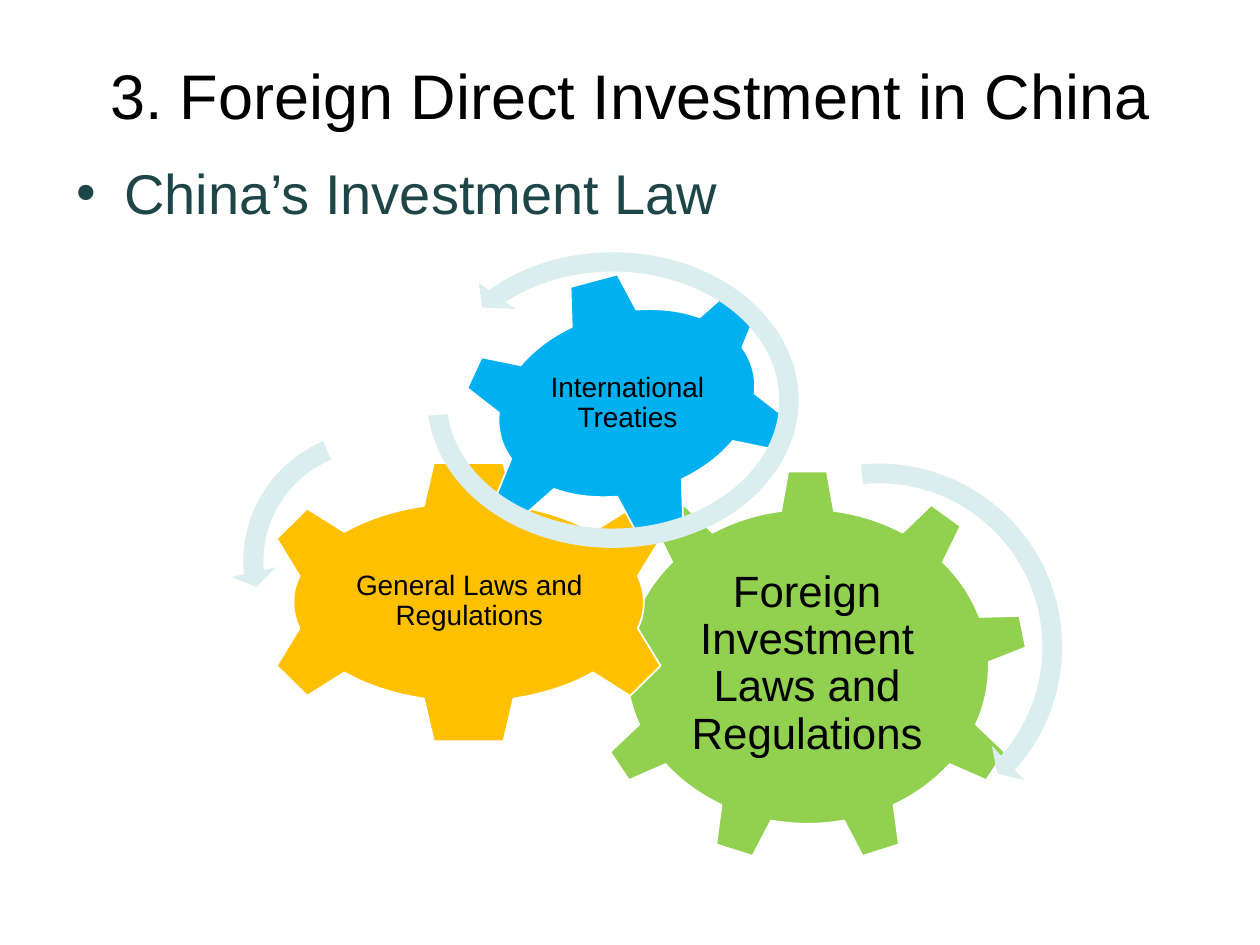
from dataclasses import dataclass

from pptx import Presentation
from pptx.dml.color import RGBColor
from pptx.enum.shapes import MSO_SHAPE
from pptx.enum.text import MSO_ANCHOR, MSO_AUTO_SIZE, PP_ALIGN
from pptx.shapes.autoshape import Shape
from pptx.shapes.group import GroupShape
from pptx.text.text import TextFrame
from pptx.util import Inches, Pt

Box = tuple[float, float, float, float]


@dataclass
class Gear:
    label: str
    outline: MSO_SHAPE
    box: Box
    label_box: Box
    color: str
    size: int
    inset: float = 0.02
    rotation: float = 0


@dataclass
class Arrow:
    outline: MSO_SHAPE
    box: Box
    adjustments: tuple[float, ...]


GEARS = [
    Gear("Foreign Investment Laws and Regulations", MSO_SHAPE.GEAR_9,
         (4.66, 3.73, 3.5, 3.12), (5.33, 4.47, 2.15, 1.6), "92D050", 25, inset=0.03),
    Gear("General Laws and Regulations", MSO_SHAPE.GEAR_6,
         (1.99, 3.65, 3.46, 2.26), (2.74, 4.22, 1.97, 1.11), "FFC000", 16),
    Gear("International Treaties", MSO_SHAPE.GEAR_6,
         (3.63, 2.17, 2.69, 2.06), (4.26, 2.59, 1.44, 1.23), "00B0F0", 16, rotation=345),
]
ARROWS = [
    Arrow(MSO_SHAPE.CIRCULAR_ARROW, (5.41, 3.57, 3.13, 3.13),
          (0.05, 2.99, 25.13, 158.68, 0.06)),
    Arrow(MSO_SHAPE.LEFT_CIRCULAR_ARROW, (1.83, 3.32, 2.27, 2.27),
          (0.07, 4.3, 104.89, 148.38, 0.08)),
    Arrow(MSO_SHAPE.LEFT_CIRCULAR_ARROW, (3.29, 1.9, 3.15, 2.55),
          (0.06, 3.94, 133.14, 105.08, 0.07)),
]


def rgb(value: str) -> RGBColor:
    return RGBColor.from_string(value)


def emu(box: Box) -> list[Inches]:
    return [Inches(length) for length in box]


def write(frame: TextFrame, text: str, *, size: float, color: str = "000000",
          align: PP_ALIGN = PP_ALIGN.CENTER, anchor: MSO_ANCHOR = MSO_ANCHOR.TOP,
          inset: float | None = None, line_spacing: float = 1,
          space_after: float = 0) -> None:
    frame.word_wrap = True
    frame.auto_size = MSO_AUTO_SIZE.NONE
    frame.vertical_anchor = anchor
    if inset is not None:
        frame.margin_left = frame.margin_right = Inches(inset)
        frame.margin_top = frame.margin_bottom = Inches(inset)
    paragraph = frame.paragraphs[0]
    paragraph.alignment = align
    paragraph.line_spacing = line_spacing
    paragraph.space_before = Pt(0)
    paragraph.space_after = Pt(space_after)
    run = paragraph.add_run()
    run.text = text
    run.font.name = "Arial"
    run.font.size = Pt(size)
    run.font.color.rgb = rgb(color)


def place(placeholder: Shape, box: Box) -> None:
    placeholder.left, placeholder.top, placeholder.width, placeholder.height = emu(box)


def add_filled(group: GroupShape, outline: MSO_SHAPE, box: Box, color: str) -> Shape:
    filled = group.shapes.add_shape(outline, *emu(box))
    filled.shadow.inherit = False
    filled.fill.solid()
    filled.fill.fore_color.rgb = rgb(color)
    return filled


def draw_gear(group: GroupShape, gear: Gear) -> None:
    wheel = add_filled(group, gear.outline, gear.box, gear.color)
    wheel.line.color.rgb = rgb("FFFFFF")
    wheel.line.width = Pt(1)
    wheel.rotation = gear.rotation
    label = group.shapes.add_textbox(*emu(gear.label_box))
    write(label.text_frame, gear.label, size=gear.size, anchor=MSO_ANCHOR.MIDDLE,
          inset=gear.inset, line_spacing=0.9, space_after=0.35 * gear.size)


def draw_arrow(group: GroupShape, arrow: Arrow) -> None:
    turn = add_filled(group, arrow.outline, arrow.box, "DAEDEF")
    turn.line.fill.background()
    for index, value in enumerate(arrow.adjustments):
        turn.adjustments[index] = value


def main() -> None:
    presentation = Presentation()
    presentation.slide_width, presentation.slide_height = Inches(10), Inches(7.5)
    slide = presentation.slides.add_slide(presentation.slide_layouts[1])

    # Title and bullet
    title, topic = slide.placeholders
    place(title, (0.69, 0.4, 8.62, 1.45))
    write(title.text_frame, "3. Foreign Direct Investment in China", size=36)
    place(topic, (0.51, 1.21, 8.62, 4.76))
    write(topic.text_frame, "China’s Investment Law", size=32, color="1E4649",
          align=PP_ALIGN.LEFT)

    # Interlocking gears with their turning arrows on top
    gearwork = slide.shapes.add_group_shape()
    for gear in GEARS:
        draw_gear(gearwork, gear)
    for arrow in ARROWS:
        draw_arrow(gearwork, arrow)

    presentation.save("out.pptx")


if __name__ == "__main__":
    main()
